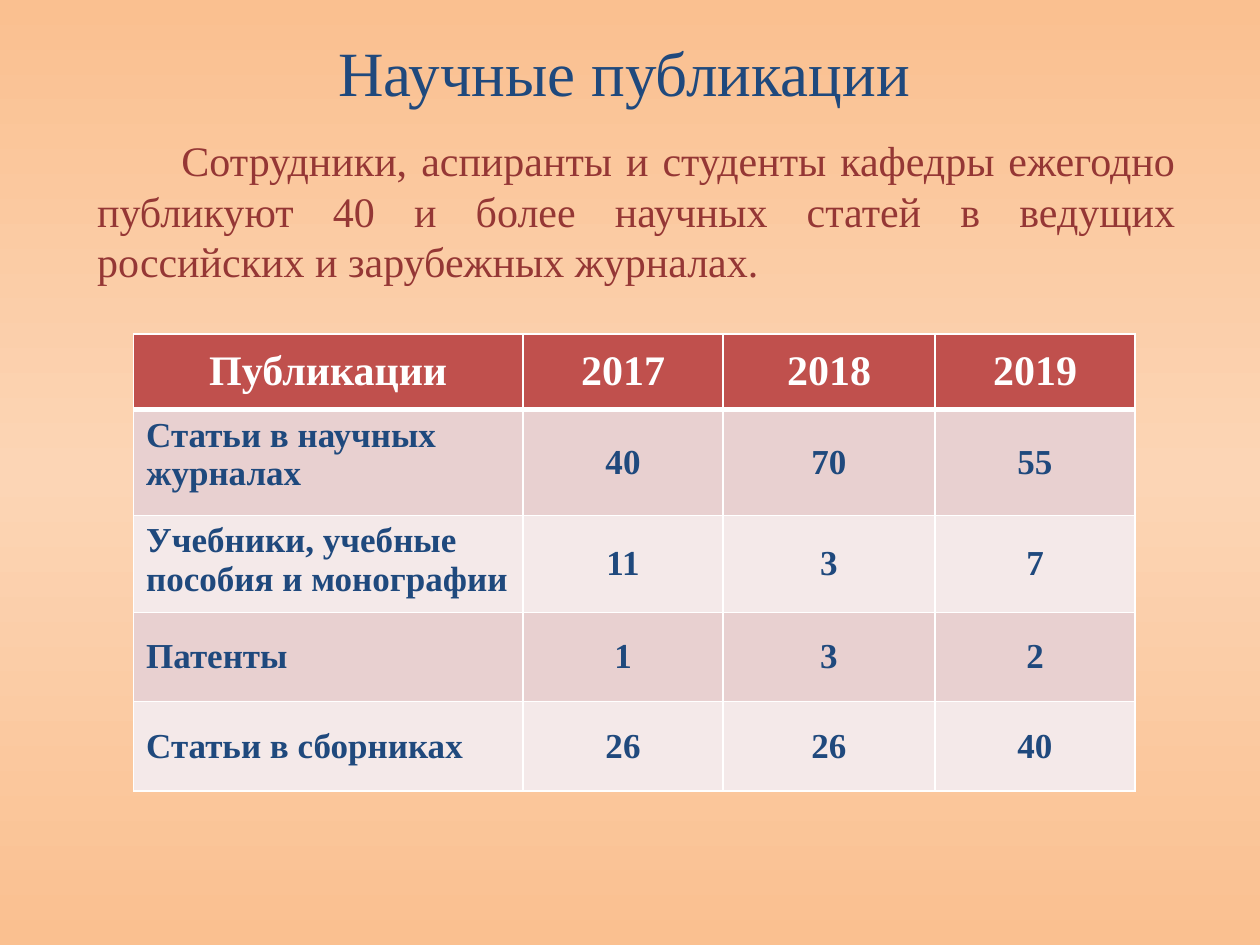
from copy import deepcopy

from lxml.etree import SubElement
from pptx import Presentation
from pptx.dml.color import RGBColor
from pptx.enum.text import MSO_ANCHOR as Anchor, PP_ALIGN as Align
from pptx.oxml.ns import qn
from pptx.util import Inches, Pt

FONT = "Times New Roman"
NAVY = RGBColor(0x1F, 0x49, 0x7D)
MAROON = RGBColor(0x95, 0x37, 0x35)
RED = RGBColor(0xC0, 0x50, 0x4D)
WHITE = RGBColor(0xFF, 0xFF, 0xFF)
BANDS = RGBColor(0xE8, 0xD0, 0xD0), RGBColor(0xF4, 0xE9, 0xE9)
PEACH = RGBColor(0xFA, 0xC0, 0x90)
LIGHT_PEACH = RGBColor(0xFC, 0xD5, 0xB5)

COL_WIDTHS = 3.09, 1.59, 1.68, 1.59
ROW_HEIGHTS = 0.6, 0.84, 0.77, 0.71, 0.71
ROWS = (
    ("Публикации", "2017", "2018", "2019"),
    ("Статьи в научных журналах", "40", "70", "55"),
    ("Учебники, учебные пособия и монографии", "11", "3", "7"),
    ("Патенты", "1", "3", "2"),
    ("Статьи в сборниках", "26", "26", "40"),
)


def write(tf, text, size, color, align, bold=False):
    p = tf.paragraphs[0]
    p.alignment = align
    r = p.add_run()
    r.text = text
    r.font.color.rgb = color
    for name, value in {"name": FONT, "size": Pt(size), "bold": bold}.items():
        setattr(r.font, name, value)
    return p


def place(sp, box):
    for name, value in zip(("left", "top", "width", "height"), box):
        setattr(sp, name, Inches(value))


def fill_background(s):
    fill = s.background.fill
    fill.gradient()
    fill.gradient_angle = 90
    stop_list = s.element.find(".//" + qn("a:gsLst"))
    stop_list.insert(1, deepcopy(stop_list[0]))
    colors = PEACH, LIGHT_PEACH, PEACH
    for stop, position, color in zip(fill.gradient_stops, (0, 0.5, 1), colors):
        stop.position = position
        stop.color.rgb = color


def add_title(s, box):
    sp = s.shapes.title
    place(sp, box)
    sp.text_frame.word_wrap = False
    write(sp.text_frame, "Научные публикации", 36, NAVY, Align.CENTER)


def add_intro(s, box):
    sp = s.placeholders[1]
    place(sp, box)
    p = write(sp.text_frame,
              "Сотрудники, аспиранты и студенты кафедры ежегодно публикуют 40 и более "
              "научных статей в ведущих российских и зарубежных журналах.",
              24, MAROON, Align.JUSTIFY)
    p.space_before = Pt(0)
    pPr = p._p.get_or_add_pPr()
    pPr.set("marL", "0")
    pPr.set("indent", str(Inches(0.67)))
    SubElement(pPr, qn("a:buNone"))


def set_borders(cell, widths):
    """Draw white cell borders; widths in points: left, right, top, bottom."""
    tcPr = cell._tc.get_or_add_tcPr()
    for i, (side, width) in enumerate(zip("LRTB", widths)):
        ln = SubElement(tcPr, qn("a:ln" + side), w=str(Pt(width)))
        SubElement(SubElement(ln, qn("a:solidFill")), qn("a:srgbClr"), val=str(WHITE))
        tcPr.insert(i, ln)


def add_publications(s, left, top):
    size = sum(COL_WIDTHS), sum(ROW_HEIGHTS)
    frame = s.shapes.add_table(len(ROWS), len(COL_WIDTHS),
                               *map(Inches, (left, top, *size)))
    table = frame.table
    for column, width in zip(table.columns, COL_WIDTHS):
        column.width = Inches(width)
    for i, (row, height, texts) in enumerate(zip(table.rows, ROW_HEIGHTS, ROWS)):
        row.height = Inches(height)
        head = i == 0
        for j, (cell, text) in enumerate(zip(row.cells, texts)):
            cell.fill.solid()
            cell.fill.fore_color.rgb = RED if head else BANDS[(i - 1) % 2]
            two_lines = j == 0 and i in (1, 2)
            cell.vertical_anchor = Anchor.TOP if two_lines else Anchor.MIDDLE
            write(cell.text_frame, text, 24 if head else 20,
                  WHITE if head else NAVY,
                  Align.CENTER if head or j else Align.LEFT, bold=True)
            set_borders(cell, (1, 1, 3 if i == 1 else 1, 3 if head else 1))


def main():
    prs = Presentation()
    prs.slide_width, prs.slide_height = Inches(10), Inches(7.5)
    s = prs.slides.add_slide(prs.slide_layouts[1])
    fill_background(s)
    add_title(s, (2.56, 0.21, 4.79, 0.71))
    add_intro(s, (0.67, 1.02, 8.76, 1.31))
    add_publications(s, 1.06, 2.65)
    prs.save("out.pptx")


if __name__ == "__main__":
    main()
